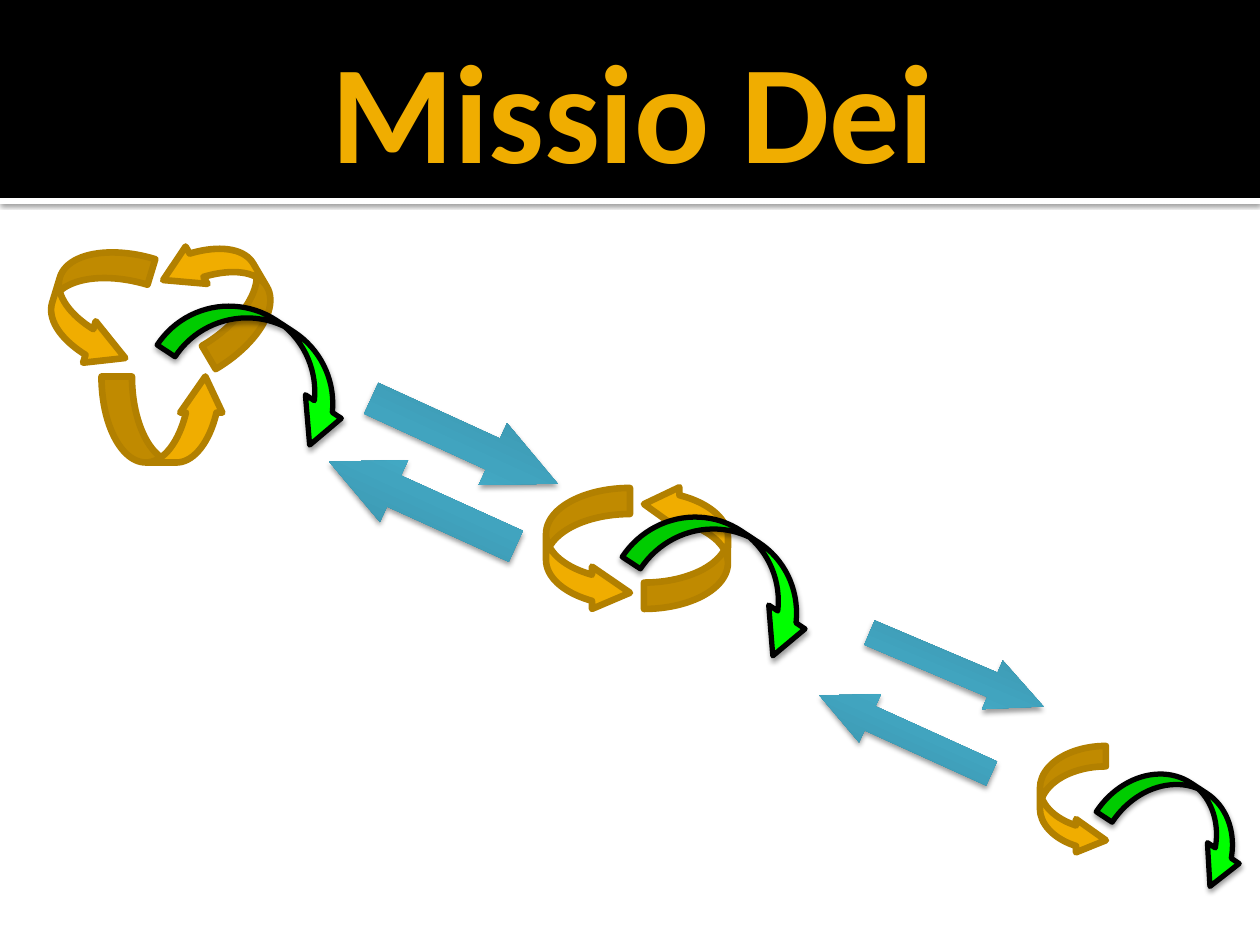
from dataclasses import dataclass

from lxml import etree
from pptx import Presentation
from pptx.dml.color import RGBColor
from pptx.enum.shapes import MSO_SHAPE
from pptx.enum.text import MSO_ANCHOR, MSO_AUTO_SIZE, PP_ALIGN
from pptx.oxml.ns import qn
from pptx.util import Emu, Pt

RECTANGLE = MSO_SHAPE.RECTANGLE
LEFT_ARROW = MSO_SHAPE.LEFT_ARROW
CURVED_ARROW = MSO_SHAPE.CURVED_RIGHT_ARROW
CENTER = PP_ALIGN.CENTER
MIDDLE = MSO_ANCHOR.MIDDLE
NO_AUTOFIT = MSO_AUTO_SIZE.NONE

EMU_PER_PX = 914400 / 126
SLIDE_WIDTH, SLIDE_HEIGHT = 1260, 945
TITLE_ONLY = 5


@dataclass(frozen=True)
class Theme:
    font: str = "Calibri"
    title_size: int = 80
    gold: str = "F0AD00"
    gold_edge: str = "B28000"
    green: str = "00FF00"
    black: str = "000000"
    white: str = "FFFFFF"
    blue_stops: tuple = ((0, "378BA2"), (55, "41A4BF"), (100, "4BBFDE"))


THEME = Theme()

# Shadows: opacity in percent, blur and distance in points
STRIP_SHADOW = (60, 2.5, 0.8)
ARROW_SHADOW = (38, 3.1, 2)

# Adjustments of the curved arrows
LEFT_CURVE = (0.311, 0.504, 0.453)
RIGHT_CURVE = (0.314, 0.504, 0.422)
BOTTOM_CURVE = (0.355, 0.491, 0.42)
SENDING_CURVE = (0.25, 0.5, 0.462)

# Box in px, rotation in degrees
EXCHANGE_ARROWS = (
    ((320, 470, 205, 68), 24.4),
    ((362, 407, 205, 68), 204.6),
    ((862, 643, 189, 53), 203),
    ((811, 708, 189, 53), 24.4),
)

# Each cycle: gold arrows (box, rotation, flip, adjustments), then the green arrow's box
CYCLES = (
    (
        (
            ((53, 244, 86, 125), 16.9, "", LEFT_CURVE),
            ((178, 231, 86, 125), 329.5, "HV", RIGHT_CURVE),
            ((121, 357, 86, 125), 270, "", BOTTOM_CURVE),
        ),
        (223, 263, 86, 204),
    ),
    (
        (
            ((546, 488, 84, 126), 0, "", LEFT_CURVE),
            ((644, 483, 84, 126), 0, "HV", RIGHT_CURVE),
        ),
        (687, 475, 87, 202),
    ),
    (
        (((1040, 746, 66, 111), 0, "", LEFT_CURVE),),
        (1144, 745, 76, 155),
    ),
)


def px(length):
    return Emu(round(length * EMU_PER_PX))


def color(value):
    return RGBColor.from_string(value)


def add_shadow(shape, opacity, blur, distance):
    effects = shape._element.spPr.find(qn("a:effectLst"))
    shadow = etree.SubElement(
        effects, qn("a:outerShdw"), blurRad=str(Pt(blur)), dist=str(Pt(distance)),
        dir="5400000", algn="ctr", rotWithShape="0")
    shade = etree.SubElement(shadow, qn("a:srgbClr"), val=THEME.black)
    etree.SubElement(shade, qn("a:alpha"), val=str(opacity * 1000))


def fill_gradient(shape, stops):
    shape.fill.gradient()
    shape.fill.gradient_angle = 90
    stop_list = shape._element.spPr.find(".//" + qn("a:gsLst"))
    for old_stop in list(stop_list):
        stop_list.remove(old_stop)
    for position, value in stops:
        stop = etree.SubElement(stop_list, qn("a:gs"), pos=str(position * 1000))
        etree.SubElement(stop, qn("a:srgbClr"), val=value)


def add_figure(shapes, kind, box, fill, line=None, line_width=0, rotation=0,
               flip="", adjustments=(), shadow=None):
    """Add a preset shape; fill is one colour or a tuple of gradient stops."""
    shape = shapes.add_shape(kind, *map(px, box))
    shape.rotation = rotation
    for axis in flip:
        shape._element.spPr.find(qn("a:xfrm")).set("flip" + axis, "1")
    for index, value in enumerate(adjustments):
        shape.adjustments[index] = value
    if isinstance(fill, tuple):
        fill_gradient(shape, fill)
    else:
        shape.fill.solid()
        shape.fill.fore_color.rgb = color(fill)
    if line:
        shape.line.color.rgb = color(line)
        shape.line.width = Pt(line_width)
        etree.SubElement(shape._element.spPr.find(qn("a:ln")), qn("a:round"))
    else:
        shape.line.fill.background()
    shape.shadow.inherit = False
    if shadow:
        add_shadow(shape, *shadow)
    return shape


def add_cycle(slide, gold_arrows, green_box):
    shapes = slide.shapes.add_group_shape().shapes
    for box, rotation, flip, adjustments in gold_arrows:
        add_figure(shapes, CURVED_ARROW, box, THEME.gold, THEME.gold_edge, 3.78,
                   rotation=rotation, flip=flip, adjustments=adjustments)
    add_figure(shapes, CURVED_ARROW, green_box, THEME.green, THEME.black, 3,
               rotation=123.3, flip="V", adjustments=SENDING_CURVE,
               shadow=ARROW_SHADOW)


def write_text(frame, text, size, value, bold=False, alignment=CENTER):
    paragraph = frame.paragraphs[0]
    paragraph.alignment = alignment
    run = paragraph.add_run()
    run.text = text
    run.font.name = THEME.font
    run.font.size = Pt(size)
    run.font.bold = bold
    run.font.color.rgb = color(value)


def set_title(slide, text, box):
    title = slide.shapes.title
    title.left, title.top, title.width, title.height = map(px, box)
    frame = title.text_frame
    frame.word_wrap = True
    frame.auto_size = NO_AUTOFIT
    frame.vertical_anchor = MIDDLE
    frame.margin_left = px(13)
    frame.margin_right = frame.margin_top = frame.margin_bottom = px(6)
    write_text(frame, text, THEME.title_size, THEME.gold, bold=True)
    slide.shapes._spTree.append(title._element)  # in front of the header band


def main():
    presentation = Presentation()
    presentation.slide_width = px(SLIDE_WIDTH)
    presentation.slide_height = px(SLIDE_HEIGHT)
    slide = presentation.slides.add_slide(presentation.slide_layouts[TITLE_ONLY])
    slide.background.fill.solid()
    slide.background.fill.fore_color.rgb = color(THEME.white)

    add_figure(slide.shapes, RECTANGLE, (0, 198, SLIDE_WIDTH, 6), THEME.white,
               shadow=STRIP_SHADOW)
    add_figure(slide.shapes, RECTANGLE, (0, 0, SLIDE_WIDTH, 198), THEME.black)
    for box, rotation in EXCHANGE_ARROWS:
        add_figure(slide.shapes, LEFT_ARROW, box, THEME.blue_stops,
                   rotation=rotation, adjustments=(0.5, 1.048),
                   shadow=ARROW_SHADOW)
    for gold_arrows, green_box in CYCLES:
        add_cycle(slide, gold_arrows, green_box)
    set_title(slide, "Missio Dei", (63, 21, 1134, 173))

    presentation.save("out.pptx")


if __name__ == "__main__":
    main()
